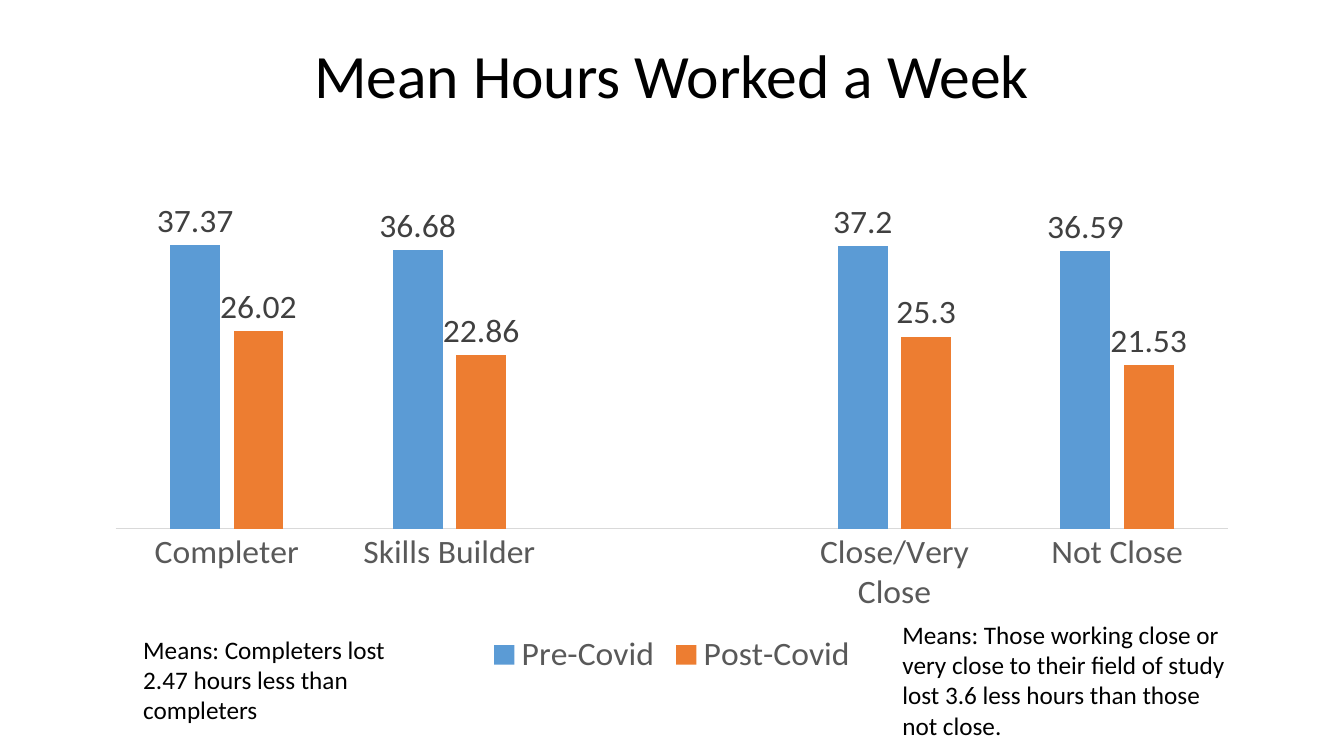
from pptx import Presentation
from pptx.chart.data import CategoryChartData
from pptx.dml.color import RGBColor
from pptx.enum.chart import XL_CHART_TYPE, XL_LABEL_POSITION, XL_LEGEND_POSITION, XL_TICK_MARK
from pptx.enum.text import MSO_ANCHOR, PP_ALIGN
from pptx.util import Pt

CLUSTERED = XL_CHART_TYPE.COLUMN_CLUSTERED
OUTSIDE_END = XL_LABEL_POSITION.OUTSIDE_END
LEGEND_BOTTOM = XL_LEGEND_POSITION.BOTTOM
NO_TICK = XL_TICK_MARK.NONE
TOP = MSO_ANCHOR.TOP
CENTER = PP_ALIGN.CENTER
LEFT = PP_ALIGN.LEFT

PX = 9525  # EMU in one px, 96 px to the inch
FONT = "Calibri"
COLORS = {
    "text": "000000",
    "axis_text": "595959",
    "axis_line": "D9D9D9",
    "label": "404040",
    "Pre-Covid": "5B9BD5",
    "Post-Covid": "ED7D31",
}

CATEGORIES = ["Completer", "Skills Builder", "", "Close/Very Close", "Not Close"]
HOURS = {
    "Pre-Covid": [37.37, 36.68, None, 37.2, 36.59],
    "Post-Covid": [26.02, 22.86, None, 25.3, 21.53],
}
NOTES = [
    ("Means: Completers lost 2.47 hours less than completers", (127, 599, 296, 97)),
    ("Means: Those working close or very close to their field of study "
     "lost 3.6 less hours than those not close.", (850, 585, 331, 126)),
]


def color(name):
    return RGBColor.from_string(COLORS[name])


def style_font(font, size, color_name):
    font.name = FONT
    font.size = Pt(size)
    font.color.rgb = color(color_name)


def emu(box):
    return [length * PX for length in box]


def add_text(page, box, text, size, align=LEFT, line_spacing=1.0):
    frame = page.shapes.add_textbox(*emu(box)).text_frame
    frame.word_wrap = True
    frame.vertical_anchor = TOP
    para = frame.paragraphs[0]
    para.text = text
    para.alignment = align
    para.line_spacing = line_spacing
    style_font(para.runs[0].font, size, "text")


def add_hours_chart(page, box):
    data = CategoryChartData()
    data.categories = CATEGORIES
    for name, values in HOURS.items():
        data.add_series(name, values)
    chart = page.shapes.add_chart(CLUSTERED, *emu(box), data).chart
    style_font(chart.font, 10, "text")
    chart.has_title = False

    # Legend
    chart.has_legend = True
    chart.legend.position = LEGEND_BOTTOM
    chart.legend.include_in_layout = False
    style_font(chart.legend.font, 24, "axis_text")

    # Axes
    category_axis = chart.category_axis
    category_axis.major_tick_mark = NO_TICK
    category_axis.format.line.color.rgb = color("axis_line")
    category_axis.format.line.width = Pt(0.75)
    style_font(category_axis.tick_labels.font, 24, "axis_text")
    value_axis = chart.value_axis
    value_axis.minimum_scale = 0
    value_axis.maximum_scale = 40
    value_axis.has_major_gridlines = False
    value_axis.visible = False

    # Columns and their labels
    plot = chart.plots[0]
    plot.vary_by_categories = False
    plot.gap_width = 219
    plot.overlap = -27
    for series in plot.series:
        series.format.fill.solid()
        series.format.fill.fore_color.rgb = color(series.name)
        labels = series.data_labels
        labels.show_value = True
        labels.position = OUTSIDE_END
        style_font(labels.font, 24, "label")


def build_page(page):
    add_text(page, (88, 38, 1104, 139), "Mean Hours Worked a Week", 44, CENTER, 0.9)
    add_hours_chart(page, (88, 192, 1104, 457))
    for text, box in NOTES:
        add_text(page, box, text, 18)


def main():
    deck = Presentation()
    deck.slide_width = 1280 * PX
    deck.slide_height = 720 * PX
    build_page(deck.slides.add_slide(deck.slide_layouts[6]))
    deck.save("out.pptx")


if __name__ == "__main__":
    main()
